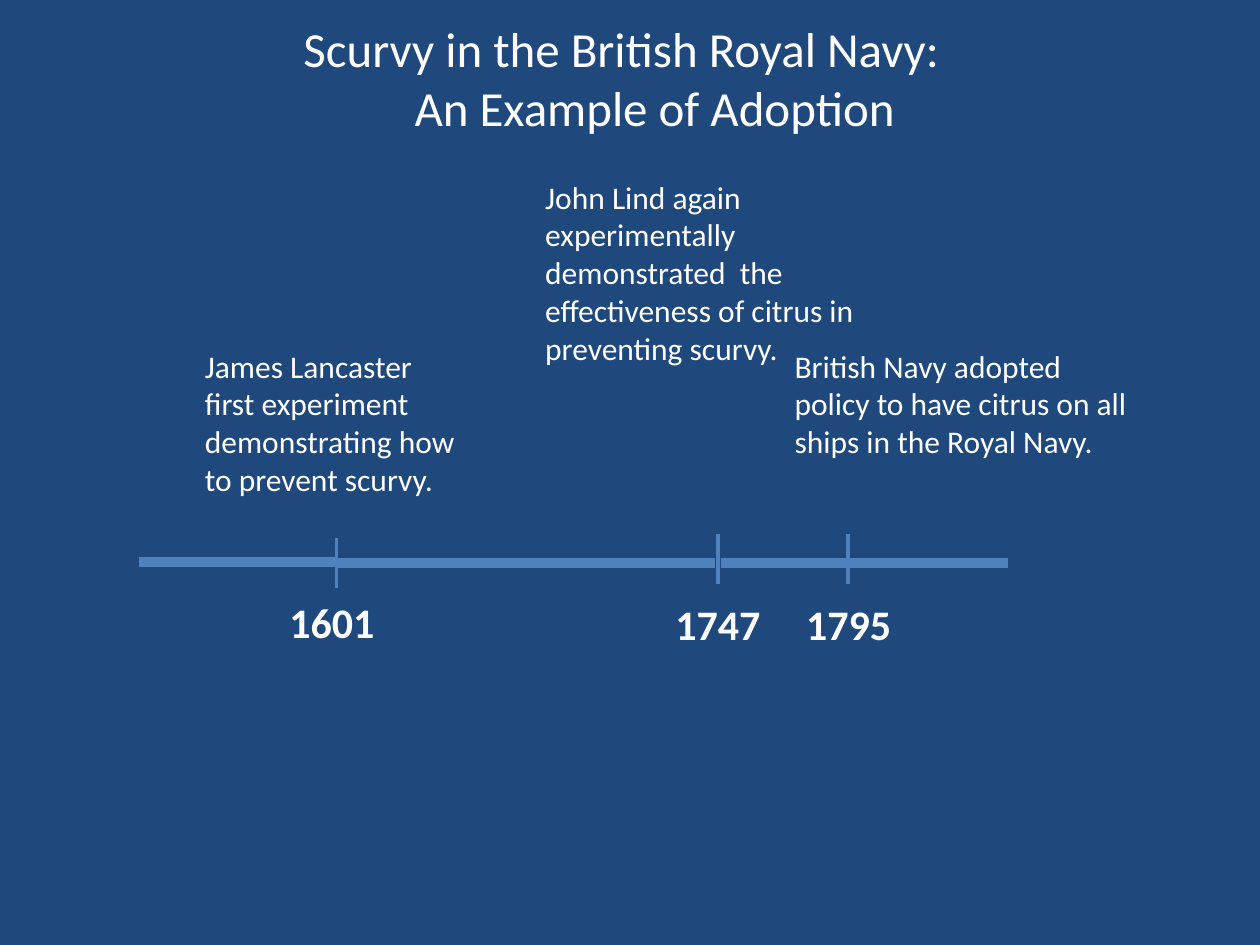
from pptx import Presentation
from pptx.dml.color import RGBColor
from pptx.enum.shapes import MSO_CONNECTOR
from pptx.enum.text import MSO_ANCHOR, MSO_AUTO_SIZE, PP_ALIGN
from pptx.oxml.ns import qn
from pptx.util import Pt
from lxml import etree

STRAIGHT = MSO_CONNECTOR.STRAIGHT
TOP = MSO_ANCHOR.TOP
NO_FIT = MSO_AUTO_SIZE.NONE
LEFT, CENTER = PP_ALIGN.LEFT, PP_ALIGN.CENTER

THEME = {
    "font": "Calibri",
    "background": RGBColor(0x1F, 0x49, 0x7D),
    "text": RGBColor(0xFF, 0xFF, 0xFF),
    "line": RGBColor(0x4F, 0x81, 0xBD),
    "title_size": 28,
    "year_size": 24,
    "story_size": 18,
    "axis_width": 6,
    "tick_width": 2,
}

TITLE_LINES = [("Scurvy in the British Royal Navy:", 0), ("An Example of Adoption", 38)]
TITLE_AREA = (164, 7.2, 382, 75)

EVENTS = [
    {
        "year": "1601", "tick": (192.25, 307.5), "year_area": (148.25, 337.5, 83, 36),
        "story": "James Lancaster first experiment demonstrating how to prevent scurvy.",
        "story_area": (110, 194.5, 160, 94),
    },
    {
        "year": "1747", "tick": (410.4, 305.25), "year_area": (368.75, 338.5, 83, 36),
        "story": "John Lind again experimentally  demonstrated  the effectiveness of "
                 "citrus in preventing scurvy.",
        "story_area": (304.5, 98, 211, 117),
    },
    {
        "year": "1795", "tick": (484.5, 305.25), "year_area": (443.5, 338.5, 83, 36),
        "story": "British Navy adopted policy to have citrus on all ships in the Royal Navy.",
        "story_area": (447, 194.5, 211, 73),
    },
]
TICK_HEIGHT = 28.5

AXIS_SEGMENTS = [
    (79.2, 192.25, 321.25),
    (192.25, 408.4, 321.75),
    (412, 484, 321.75),
    (484.5, 576, 321.75),
]


def points(values):
    return [Pt(value) for value in values]


def add_line(page, start, end, width):
    line = page.shapes.add_connector(STRAIGHT, *points(start + end))
    line.line.color.rgb = THEME["line"]
    line.line.width = Pt(width)
    etree.SubElement(line._element.spPr, qn("a:effectLst"))


def write_line(para, text, size, align, bold=False):
    para.alignment = align
    span = para.add_run()
    span.text = text
    span.font.name = THEME["font"]
    span.font.size = Pt(size)
    span.font.bold = bold
    span.font.color.rgb = THEME["text"]


def set_frame(box):
    frame = box.text_frame
    frame.word_wrap = True
    frame.auto_size = NO_FIT
    frame.vertical_anchor = TOP
    return frame


def add_text(page, area, text, size, align, bold=False):
    box = page.shapes.add_textbox(*points(area))
    write_line(set_frame(box).paragraphs[0], text, size, align, bold)


def fill_title(page):
    box = page.shapes.title
    box.left, box.top, box.width, box.height = points(TITLE_AREA)
    frame = set_frame(box)
    for index, (text, indent) in enumerate(TITLE_LINES):
        para = frame.add_paragraph() if index else frame.paragraphs[0]
        write_line(para, text, THEME["title_size"], CENTER)
        para._p.get_or_add_pPr().set("marL", str(Pt(indent)))


def main():
    deck = Presentation()
    deck.slide_width, deck.slide_height = points((720, 540))
    page = deck.slides.add_slide(deck.slide_layouts.get_by_name("Title Only"))
    page.background.fill.solid()
    page.background.fill.fore_color.rgb = THEME["background"]

    fill_title(page)
    for left, right, level in AXIS_SEGMENTS:
        add_line(page, (left, level), (right, level), THEME["axis_width"])
    for event in EVENTS:
        across, top = event["tick"]
        add_line(page, (across, top), (across, top + TICK_HEIGHT), THEME["tick_width"])
        add_text(page, event["story_area"], event["story"], THEME["story_size"], LEFT)
        add_text(page, event["year_area"], event["year"], THEME["year_size"], CENTER, True)

    deck.save("out.pptx")


if __name__ == "__main__":
    main()
